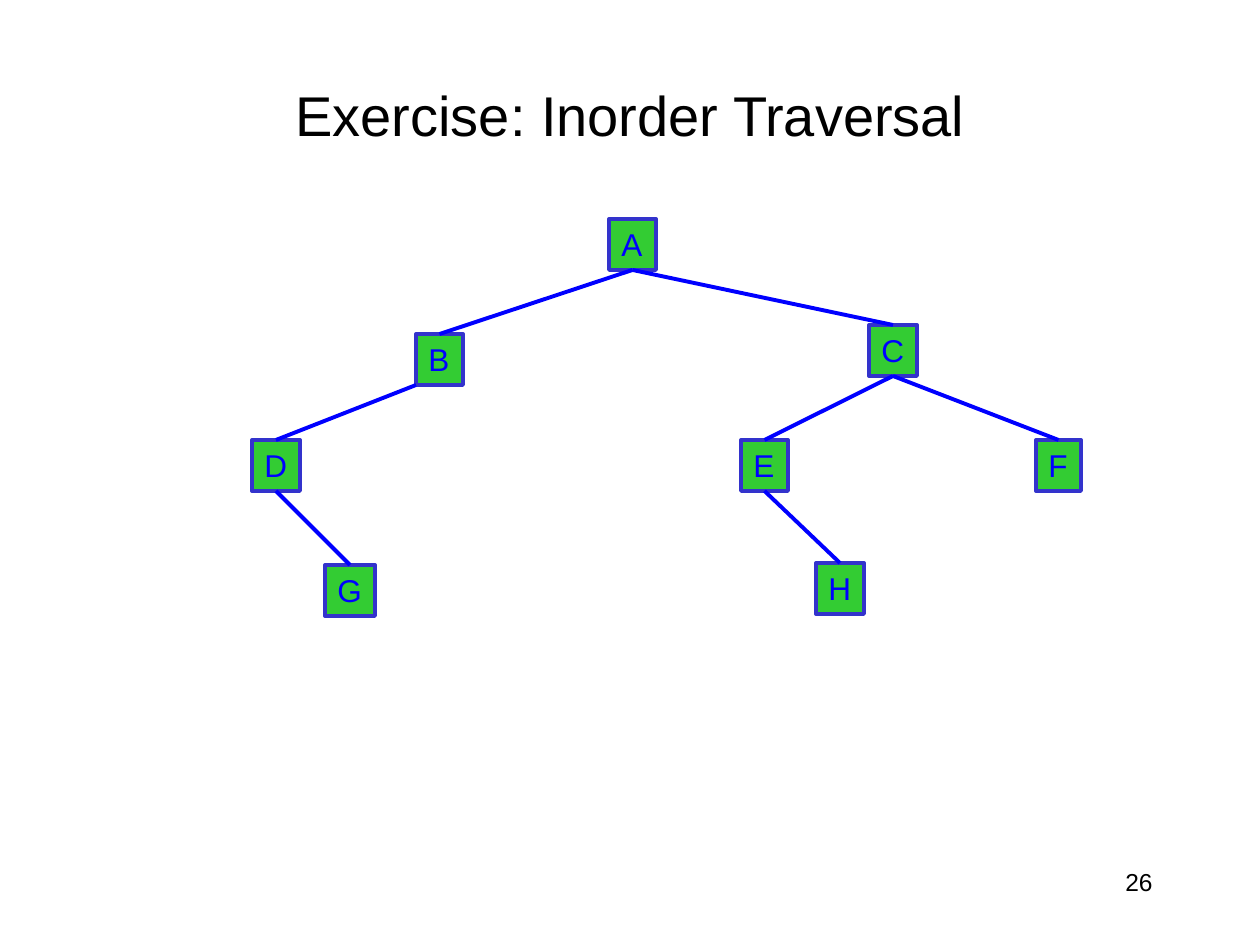
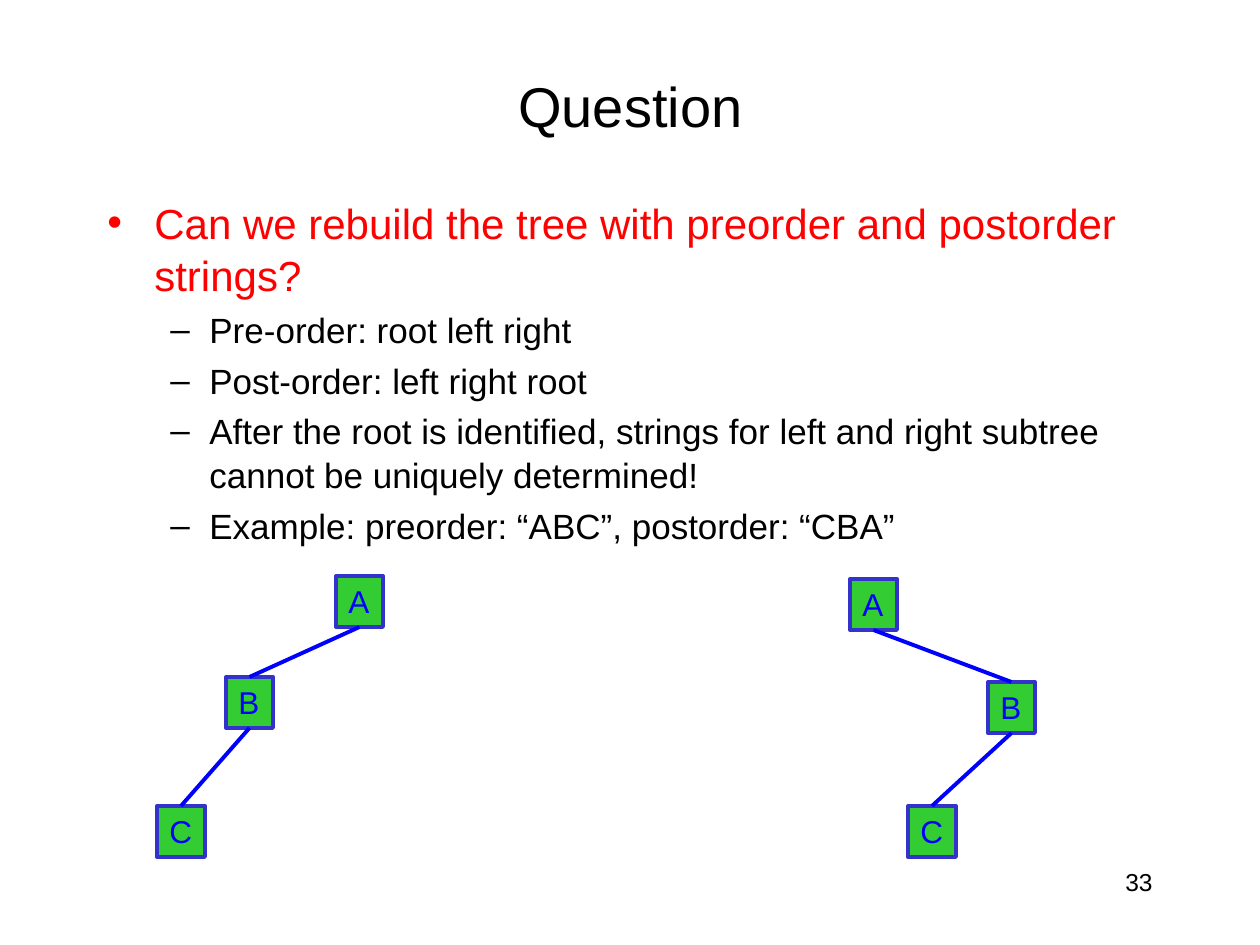
"""Build two slides on binary tree traversal."""
from lxml.etree import SubElement
from pptx import Presentation
from pptx.dml.color import RGBColor
from pptx.enum.shapes import MSO_CONNECTOR as CONN, MSO_SHAPE as SHAPE
from pptx.enum.text import MSO_ANCHOR as ANCHOR, MSO_AUTO_SIZE as FIT, PP_ALIGN as ALIGN
from pptx.oxml.ns import qn
from pptx.util import Pt

PX = 914400 / 126
FONT = "Arial"
COLORS = {"text": "000000", "ask": "FF0000", "node": "33CC33", "border": "3333CC", "link": "0000FF"}
NODE_H = 51
NODE_W = {"A": 47, "B": 47, "C": 48, "D": 48, "E": 47, "F": 45, "G": 50, "H": 48}
BULLETS = [("•", 47, 47, 24, "ask"), ("–", 102, 39, 20, "text")]

SLIDES = [
    {
        "title": "Exercise: Inorder Traversal", "title_top": 62, "number": "26", "body": [],
        "trees": [
            ({"A": (609, 219), "B": (416, 334), "C": (869, 325), "D": (252, 440),
              "G": (325, 565), "E": (741, 440), "F": (1036, 440), "H": (816, 563)},
             ["AB", "AC", "BD", "DG", "CE", "CF", "EH"]),
        ],
    },
    {
        "title": "Question", "title_top": 53, "number": "33",
        "body": [
            (0, "Can we rebuild the tree with preorder and postorder strings?"),
            (1, "Pre-order: root left right"),
            (1, "Post-order: left right root"),
            (1, "After the root is identified, strings for left and right subtree cannot be uniquely determined!"),
            (1, "Example: preorder: “ABC”, postorder: “CBA”"),
        ],
        "trees": [
            ({"A": (336, 576), "B": (226, 677), "C": (157, 806)}, ["AB", "BC"]),
            ({"A": (850, 579), "B": (988, 682), "C": (908, 806)}, ["AB", "BC"]),
        ],
    },
]


def px(*lengths):
    """Turn px into EMU."""
    return [round(n * PX) for n in lengths]


def write(tf, text, size=18, color="text", align=ALIGN.LEFT, wrap=True, anchor=ANCHOR.TOP):
    """Add one formatted paragraph and return it."""
    tf.word_wrap, tf.vertical_anchor = wrap, anchor
    p = tf.add_paragraph() if tf.text else tf.paragraphs[0]
    p.alignment = align
    r = p.add_run()
    r.text = text
    r.font.name, r.font.size = FONT, Pt(size)
    r.font.color.rgb = RGBColor.from_string(COLORS[color])
    return p


prs = Presentation()
prs.slide_width, prs.slide_height = px(1260, 945)

for page in SLIDES:
    s = prs.slides.add_slide(prs.slide_layouts[6])
    number = s.shapes.add_textbox(*px(903, 861, 262, 63))
    write(number.text_frame, page["number"], size=14, align=ALIGN.RIGHT)
    title = s.shapes.add_textbox(*px(95, page["title_top"], 1071, 105))
    write(title.text_frame, page["title"], size=32, align=ALIGN.CENTER, anchor=ANCHOR.MIDDLE)

    if page["body"]:
        body = s.shapes.add_textbox(*px(95, 189, 1071, 410))
        for level, text in page["body"]:
            char, margin, hang, size, color = BULLETS[level]
            p = write(body.text_frame, text, size=size, color=color)
            p.level, p.space_before, p.line_spacing = level, Pt(size * 0.2), 1.04
            pPr = p._p.get_or_add_pPr()
            left, indent = px(margin, -hang)
            pPr.set("marL", str(left))
            pPr.set("indent", str(indent))
            SubElement(pPr, qn("a:buFont"), typeface=FONT)
            SubElement(pPr, qn("a:buChar"), char=char)

    for places, edges in page["trees"]:
        nodes = {}
        for name, (x, y) in places.items():
            sp = s.shapes.add_shape(SHAPE.RECTANGLE, *px(x, y, NODE_W[name], NODE_H))
            sp.shadow.inherit = False
            sp.fill.solid()
            sp.fill.fore_color.rgb = RGBColor.from_string(COLORS["node"])
            sp.line.color.rgb = RGBColor.from_string(COLORS["border"])
            sp.line.width = Pt(2.25)
            write(sp.text_frame, name, color="link", wrap=False)
            sp.text_frame.auto_size = FIT.SHAPE_TO_FIT_TEXT
            nodes[name] = sp
        for parent, child in edges:
            top, low = nodes[parent], nodes[child]
            line = s.shapes.add_connector(CONN.STRAIGHT, top.left, top.top + top.height, low.left, low.top)
            if parent + child != "BD":
                line.begin_connect(top, 2)
            line.end_connect(low, 0)
            line.line.color.rgb = RGBColor.from_string(COLORS["link"])
            line.line.width = Pt(2.25)
            SubElement(line._element.spPr, qn("a:effectLst"))

prs.save("out.pptx")
